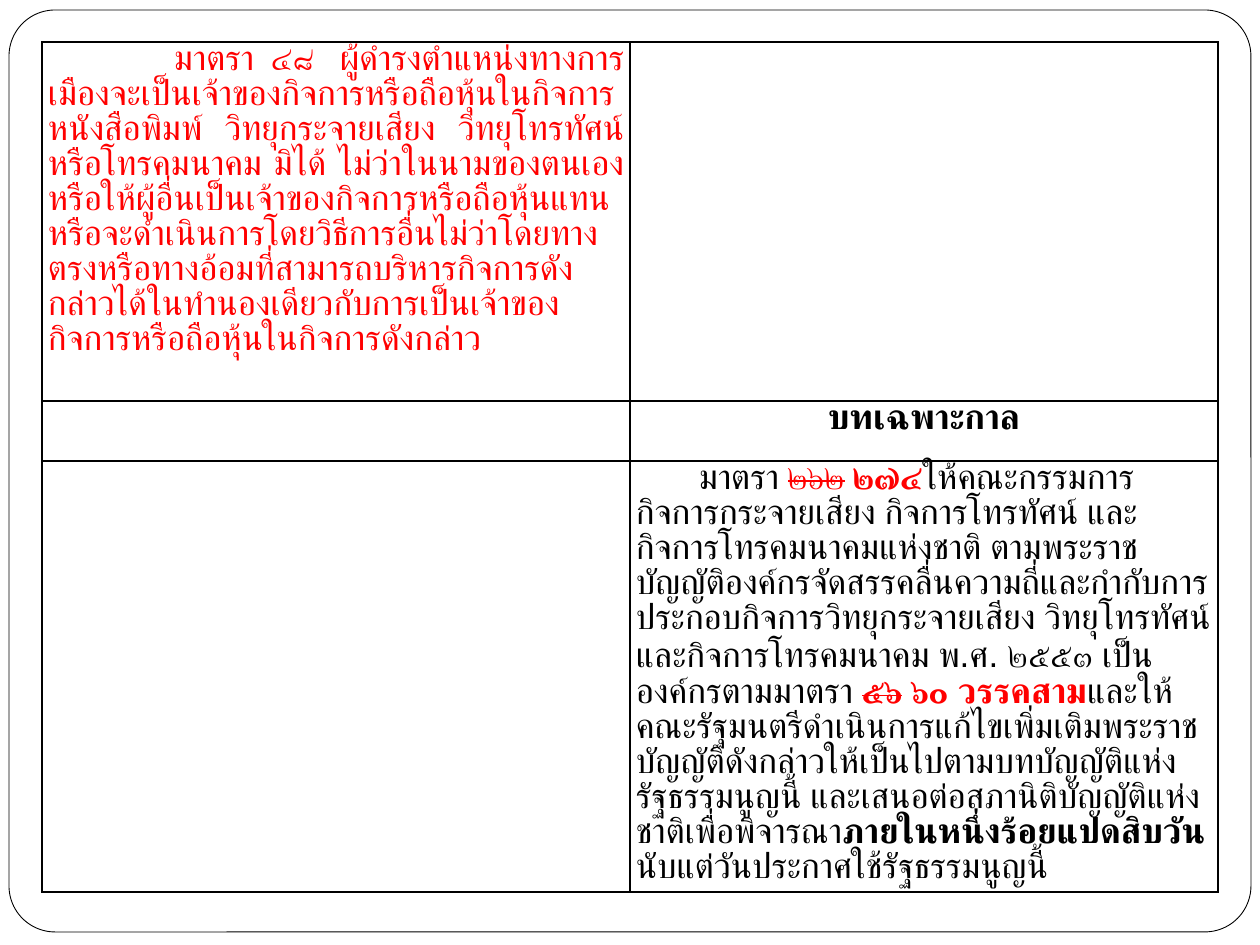
from dataclasses import dataclass

from lxml import etree
from pptx import Presentation
from pptx.dml.color import RGBColor
from pptx.enum.shapes import MSO_SHAPE
from pptx.enum.text import PP_ALIGN
from pptx.oxml.ns import qn
from pptx.util import Emu, Pt

ROUND_RECT = MSO_SHAPE.ROUNDED_RECTANGLE
LEFT, CENTER, JUSTIFY = PP_ALIGN.LEFT, PP_ALIGN.CENTER, PP_ALIGN.JUSTIFY
BLACK, RED, WHITE = "000000", "FF0000", "FFFFFF"
FONT = "Arial"
PX_PER_INCH = 126
COLUMNS = (588, 588)
ROWS = (359, 60, 431)


@dataclass
class Run:
    """A stretch of text in one style."""
    text: str
    color: str = BLACK
    bold: bool = False
    strike: bool = False


@dataclass
class Entry:
    """The paragraph of one table cell."""
    row: int
    col: int
    runs: list[Run]
    align: PP_ALIGN = LEFT
    indent: int = 0
    space_after: int = 0


ENTRIES = [
    Entry(0, 0, [Run(
        "มาตรา ๔๘ \u00a0ผู้ดำรงตำแหน่งทางการเมืองจะเป็นเจ้าของกิจการหรือถือหุ้นในกิจการ"
        "หนังสือพิมพ์ วิทยุกระจายเสียง วิทยุโทรทัศน์ หรือโทรคมนาคม มิได้ "
        "ไม่ว่าในนามของตนเองหรือให้ผู้อื่นเป็นเจ้าของกิจการหรือถือหุ้นแทน "
        "หรือจะดำเนินการโดยวิธีการอื่นไม่ว่าโดยทางตรงหรือทางอ้อมที่สามารถบริหารกิจการ"
        "ดังกล่าวได้ในทำนองเดียวกับการเป็นเจ้าของกิจการหรือถือหุ้นในกิจการดังกล่าว", RED)],
        JUSTIFY, 126, 12),
    Entry(1, 1, [Run("บทเฉพาะกาล", bold=True)], CENTER),
    Entry(2, 1, [
        Run("มาตรา "),
        Run("๒๖๒", RED, strike=True),
        Run(" "),
        Run("๒๗๔", RED, bold=True),
        Run("ให้คณะกรรมการกิจการกระจายเสียง กิจการโทรทัศน์ และกิจการโทรคมนาคมแห่งชาติ "
            "ตามพระราชบัญญัติองค์กรจัดสรรคลื่นความถี่และกำกับการประกอบกิจการ"
            "วิทยุกระจายเสียง วิทยุโทรทัศน์และกิจการโทรคมนาคม พ.ศ. ๒๕๕๓ "
            "เป็นองค์กรตามมาตรา "),
        Run("๕๖", RED, bold=True, strike=True),
        Run(" "),
        Run("๖๐ วรรคสาม", RED, bold=True),
        Run("และให้คณะรัฐมนตรีดำเนินการแก้ไขเพิ่มเติมพระราชบัญญัติดังกล่าว"
            "ให้เป็นไปตามบทบัญญัติแห่งรัฐธรรมนูญนี้ "
            "และเสนอต่อสภานิติบัญญัติแห่งชาติเพื่อพิจารณา"),
        Run("ภายในหนึ่งร้อยแปดสิบวัน", bold=True),
        Run("นับแต่วันประกาศใช้รัฐธรรมนูญนี้"),
    ], indent=63, space_after=12),
]


def px(n: int) -> Emu:
    """Turn pixels into EMU."""
    return Emu(round(n * 914400 / PX_PER_INCH))


def rgb(color: str) -> RGBColor:
    """Turn a hex string into a colour."""
    return RGBColor.from_string(color)


def add_frame(s) -> None:
    """Draw the rounded frame around the slide."""
    sp = s.shapes.add_shape(ROUND_RECT, px(9), px(10), px(1242), px(922))
    sp.adjustments[0] = 0.05
    sp.shadow.inherit = False
    sp.fill.solid()
    sp.fill.fore_color.rgb = rgb(WHITE)
    sp.line.color.rgb = rgb(BLACK)
    sp.line.width = Pt(0.5)


def style_cell(cell) -> None:
    """Give a cell its borders, margins and clear fill."""
    cell.margin_left = cell.margin_right = px(6)
    cell.margin_top = cell.margin_bottom = 0
    tc_pr = cell._tc.get_or_add_tcPr()
    for side in ("lnL", "lnR", "lnT", "lnB"):
        ln = etree.SubElement(tc_pr, qn(f"a:{side}"), w=str(Pt(1)))
        fill = etree.SubElement(ln, qn("a:solidFill"))
        etree.SubElement(fill, qn("a:srgbClr"), val=BLACK)
    cell.fill.background()


def add_run(p, run: Run) -> None:
    """Add one styled run to a paragraph."""
    r = p.add_run()
    r.text = run.text
    r.font.size = Pt(20)
    r.font.name = FONT
    r.font.bold = run.bold
    r.font.color.rgb = rgb(run.color)
    if run.strike:
        r._r.get_or_add_rPr().set("strike", "sngStrike")


def fill_cell(cell, entry: Entry) -> None:
    """Write an entry into its cell."""
    p = cell.text_frame.paragraphs[0]
    p.alignment = entry.align
    p.space_after = Pt(entry.space_after)
    p._p.get_or_add_pPr().set("indent", str(px(entry.indent)))
    for run in entry.runs:
        add_run(p, run)


def add_law_table(s) -> None:
    """Add the table that compares the two drafts."""
    table = s.shapes.add_table(len(ROWS), len(COLUMNS), px(42), px(42),
                               px(sum(COLUMNS)), px(sum(ROWS))).table
    table.first_row = table.horz_banding = False
    for column, width in zip(table.columns, COLUMNS):
        column.width = px(width)
    for row, height in zip(table.rows, ROWS):
        row.height = px(height)
    for cell in table.iter_cells():
        style_cell(cell)
    for entry in ENTRIES:
        fill_cell(table.cell(entry.row, entry.col), entry)


def main() -> None:
    """Build and save the slide."""
    prs = Presentation()
    prs.slide_width, prs.slide_height = px(1260), px(945)
    s = prs.slides.add_slide(prs.slide_layouts[6])
    add_frame(s)
    add_law_table(s)
    prs.save("out.pptx")


if __name__ == "__main__":
    main()
